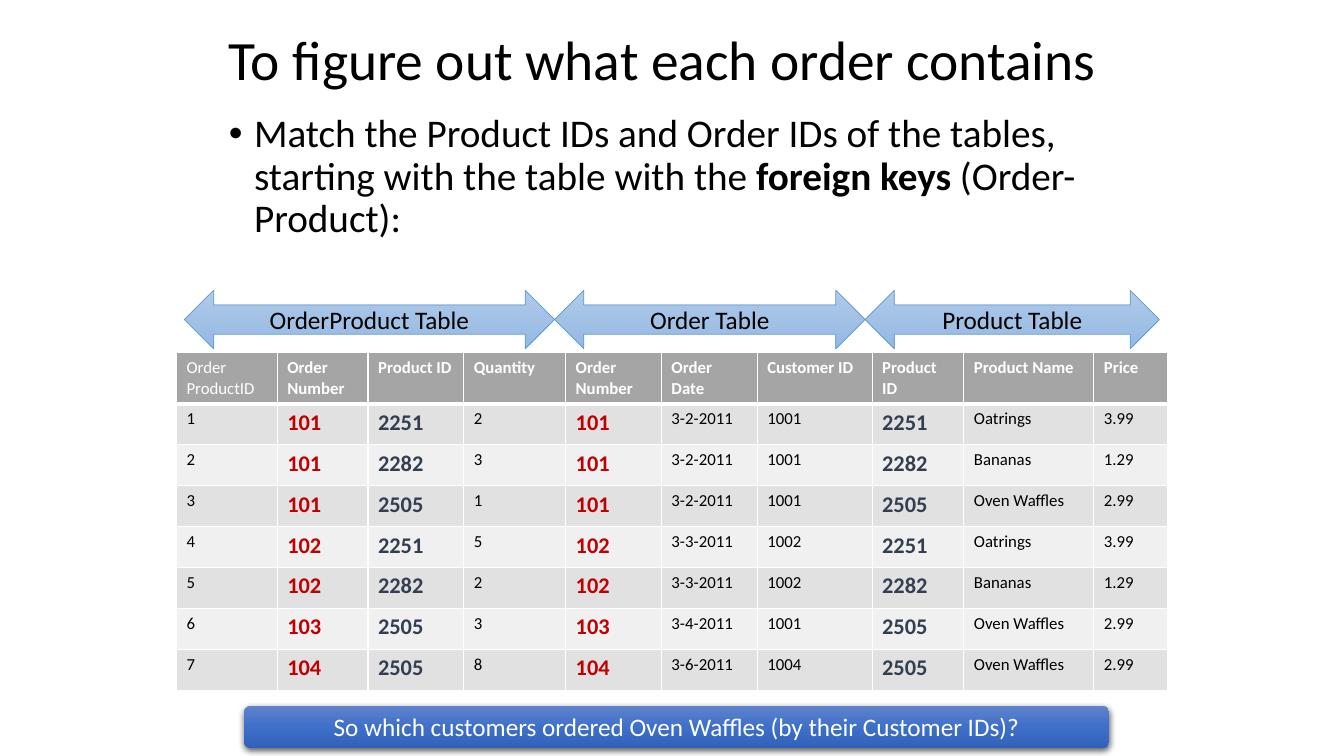
from copy import deepcopy
from dataclasses import dataclass

from lxml import etree
from pptx import Presentation
from pptx.dml.color import RGBColor
from pptx.enum.shapes import MSO_SHAPE
from pptx.enum.text import MSO_ANCHOR, MSO_AUTO_SIZE, PP_ALIGN
from pptx.oxml.ns import qn
from pptx.util import Inches, Pt

DOUBLE_ARROW = MSO_SHAPE.LEFT_RIGHT_ARROW
ROUNDED = MSO_SHAPE.ROUNDED_RECTANGLE
MIDDLE = MSO_ANCHOR.MIDDLE
TOP = MSO_ANCHOR.TOP
LEFT = PP_ALIGN.LEFT
CENTER = PP_ALIGN.CENTER
NO_AUTOFIT = MSO_AUTO_SIZE.NONE


@dataclass(frozen=True)
class Theme:
    font: str = "Calibri"
    black: str = "000000"
    white: str = "FFFFFF"
    header: str = "A5A5A5"
    bands: tuple = ("E1E1E1", "F0F0F0")
    order_key: str = "C00000"
    product_key: str = "333F50"
    arrow: tuple = ("B1CBE9", "A3C1E5", "93B9E4")
    arrow_line: str = "5B9BD5"
    banner: tuple = ("6183CB", "3E70CA", "3062BB")
    title_size: float = 39.6
    body_size: int = 28
    label_size: int = 18
    key_size: int = 16
    cell_size: int = 12


THEME = Theme()

HEADERS = ["Order\nProductID", "Order\nNumber", "Product ID", "Quantity",
           "Order Number", "Order Date", "Customer ID", "Product ID",
           "Product Name", "Price"]
COLUMN_WIDTHS = [1, 0.9, 0.95, 1.01, 0.95, 0.95, 1.14, 0.91, 1.29, 0.73]
KEY_COLORS = {1: THEME.order_key, 4: THEME.order_key,
              2: THEME.product_key, 7: THEME.product_key}
ORDERS = {"101": ("3-2-2011", "1001"), "102": ("3-3-2011", "1002"),
          "103": ("3-4-2011", "1001"), "104": ("3-6-2011", "1004")}
PRODUCTS = {"2251": ("Oatrings", "3.99"), "2282": ("Bananas", "1.29"),
            "2505": ("Oven Waffles", "2.99")}
ORDER_LINES = [("101", "2251", "2"), ("101", "2282", "3"), ("101", "2505", "1"),
               ("102", "2251", "5"), ("102", "2282", "2"), ("103", "2505", "3"),
               ("104", "2505", "8")]
TABLE_SPANS = [("OrderProduct Table", 3.67), ("Order Table", 3.08),
               ("Product Table", 2.92)]


def add_span(para, text, size, color, bold=False):
    span = para.add_run()
    span.text = text
    span.font.name = THEME.font
    span.font.size = Pt(size)
    span.font.bold = bold
    span.font.color.rgb = RGBColor.from_string(color)


def place(shape, box):
    shape.left, shape.top, shape.width, shape.height = map(Inches, box)


def prepare_placeholder(placeholder, box, anchor):
    """Position a text placeholder and return its first paragraph."""
    place(placeholder, box)
    frame = placeholder.text_frame
    frame.auto_size = NO_AUTOFIT
    frame.word_wrap = True
    frame.vertical_anchor = anchor
    para = frame.paragraphs[0]
    para.alignment = LEFT
    para.line_spacing = 0.9
    return para


def fill_title(page, box):
    para = prepare_placeholder(page.shapes.title, box, MIDDLE)
    add_span(para, "To figure out what each order contains",
             THEME.title_size, THEME.black)


def fill_body(page, box):
    para = prepare_placeholder(page.placeholders[1], box, TOP)
    para.space_before = Pt(10)
    properties = para._p.get_or_add_pPr()
    properties.set("marL", str(Inches(0.25)))
    properties.set("indent", str(-Inches(0.25)))
    bullet = etree.SubElement(properties, qn("a:buChar"))
    bullet.set("char", "•")
    for text, bold in [
        ("Match the Product IDs and Order IDs of the tables, "
         "starting with the table with the ", False),
        ("foreign keys ", True),
        ("(Order-Product):", False),
    ]:
        add_span(para, text, THEME.body_size, THEME.black, bold)


def add_border(cell, side, width):
    line = etree.SubElement(cell._tc.get_or_add_tcPr(), qn("a:" + side))
    line.set("w", str(Pt(width)))
    solid = etree.SubElement(line, qn("a:solidFill"))
    etree.SubElement(solid, qn("a:srgbClr")).set("val", THEME.white)


def fill_cell(cell, text, size, color, bold, background, rule_below=1):
    for side, width in zip(("lnL", "lnR", "lnT", "lnB"), (1, 1, 1, rule_below)):
        add_border(cell, side, width)
    cell.fill.solid()
    cell.fill.fore_color.rgb = RGBColor.from_string(background)
    para = cell.text_frame.paragraphs[0]
    for index, line in enumerate(text.split("\n")):
        if index:
            para.add_line_break()
        add_span(para, line, size, color, bold)


def add_joined_table(page, box):
    """Join order lines with their order and product, one row each."""
    table = page.shapes.add_table(len(ORDER_LINES) + 1, len(HEADERS),
                                  *map(Inches, box)).table
    for column, width in zip(table.columns, COLUMN_WIDTHS):
        column.width = Inches(width)
    for index, header in enumerate(HEADERS):
        fill_cell(table.cell(0, index), header, THEME.cell_size, THEME.white,
                  index > 0, THEME.header, rule_below=3)
    for number, (order, product, quantity) in enumerate(ORDER_LINES, start=1):
        values = [str(number), order, product, quantity,
                  order, *ORDERS[order], product, *PRODUCTS[product]]
        band = THEME.bands[(number - 1) % 2]
        for index, value in enumerate(values):
            is_key = index in KEY_COLORS
            fill_cell(table.cell(number, index), value,
                      THEME.key_size if is_key else THEME.cell_size,
                      KEY_COLORS.get(index, THEME.black), is_key, band)


def add_gradient_shape(page, kind, box, colors, text, text_color):
    """Add a labelled shape shaded from top to bottom in three colours."""
    shape = page.shapes.add_shape(kind, *map(Inches, box))
    shape.shadow.inherit = False
    shape.fill.gradient()
    shape.fill.gradient_angle = 270
    stops = shape._element.spPr.find(".//" + qn("a:gsLst"))
    stops.insert(1, deepcopy(stops[0]))
    for stop, position, color in zip(shape.fill.gradient_stops, (0, 0.5, 1), colors):
        stop.position = position
        stop.color.rgb = RGBColor.from_string(color)
    frame = shape.text_frame
    frame.word_wrap = True
    frame.vertical_anchor = MIDDLE
    para = frame.paragraphs[0]
    para.alignment = CENTER
    add_span(para, text, THEME.label_size, text_color)
    return shape


def add_table_arrows(page, box):
    left, top, _, height = box
    for name, width in TABLE_SPANS:
        arrow = add_gradient_shape(page, DOUBLE_ARROW, (left, top, width, height),
                                   THEME.arrow, name, THEME.black)
        arrow.line.color.rgb = RGBColor.from_string(THEME.arrow_line)
        arrow.line.width = Pt(0.5)
        left += width


def add_question_banner(page, box):
    banner = add_gradient_shape(
        page, ROUNDED, box, THEME.banner,
        "So which customers ordered Oven Waffles (by their Customer IDs)?", THEME.white)
    banner.line.fill.background()
    effects = banner._element.spPr.find(qn("a:effectLst"))
    shadow = etree.SubElement(effects, qn("a:outerShdw"), blurRad=str(Pt(4.5)),
                              dist=str(Pt(1.5)), dir="5400000", rotWithShape="0")
    color = etree.SubElement(shadow, qn("a:srgbClr"), val=THEME.black)
    etree.SubElement(color, qn("a:alpha"), val="63000")


def main():
    deck = Presentation()
    deck.slide_width, deck.slide_height = Inches(13.33), Inches(7.5)
    page = deck.slides.add_slide(deck.slide_layouts[1])
    fill_title(page, (2.17, 0, 9, 1.25))
    fill_body(page, (2.17, 1.08, 9.17, 5.33))
    add_joined_table(page, (1.75, 3.5, 9.83, 3.25))
    add_table_arrows(page, (1.83, 2.88, 9.67, 0.58))
    add_question_banner(page, (2.42, 7, 8.58, 0.42))
    deck.save("out.pptx")


if __name__ == "__main__":
    main()
